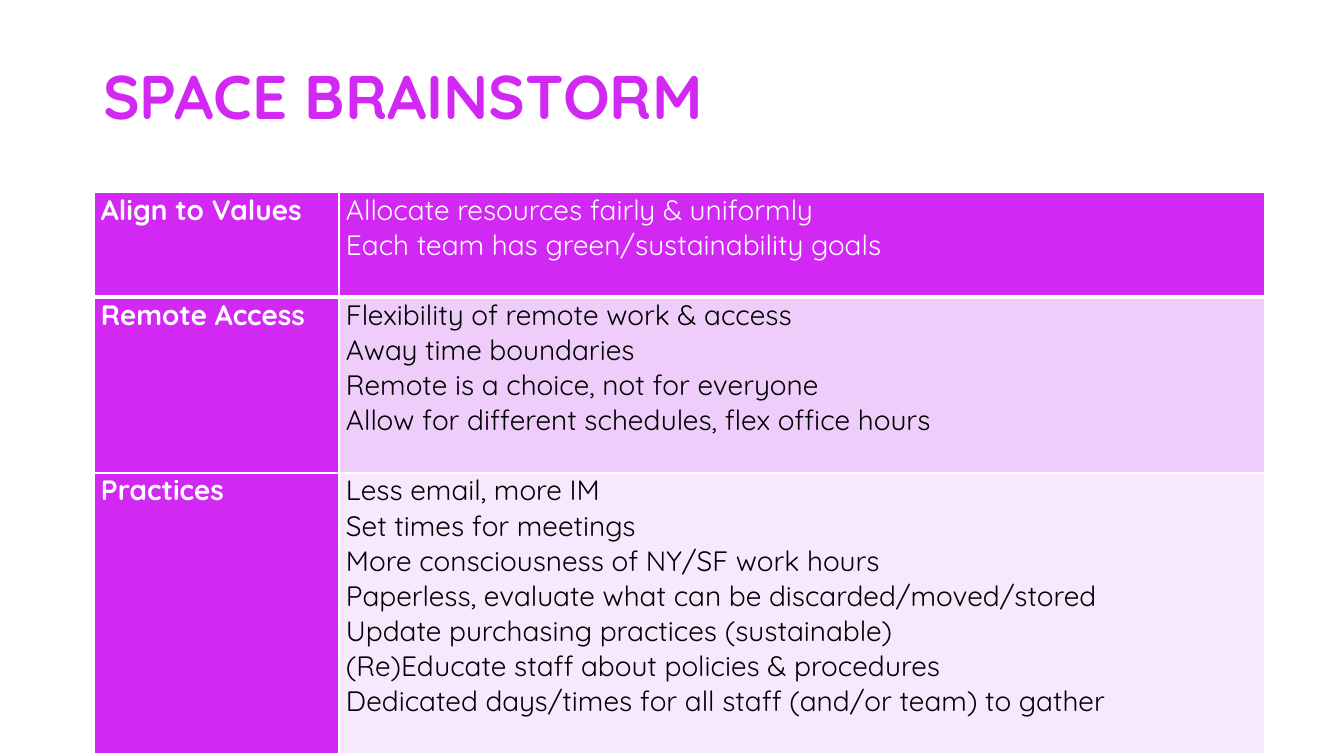
from lxml import etree
from pptx import Presentation
from pptx import util as u
from pptx.dml.color import RGBColor
from pptx.enum import text
from pptx.oxml.ns import qn

TITLE = "SPACE BRAINSTORM"
# topic, ideas, row height in px, idea fill, idea text colour
TOPICS = [
    ("Align to Values", [
        "Allocate resources fairly & uniformly",
        "Each team has green/sustainability goals",
    ], 105, "purple", "white"),
    ("Remote Access", [
        "Flexibility of remote work & access",
        "Away time boundaries",
        "Remote is a choice, not for everyone",
        "Allow for different schedules, flex office hours",
    ], 176, "lilac", "black"),
    ("Practices", [
        "Less email, more IM",
        "Set times for meetings",
        "More consciousness of NY/SF work hours",
        "Paperless, evaluate what can be discarded/moved/stored",
        "Update purchasing practices (sustainable)",
        "(Re)Educate staff about policies & procedures",
        "Dedicated days/times for all staff (and/or team) to gather",
    ], 281, "pale", "black"),
]
COLORS = {"purple": "D228F3", "lilac": "EECDFA", "pale": "F7E8FD",
          "white": "FFFFFF", "black": "000000"}
FONT = "Quicksand"
SLIDE_SIZE = (1344, 756)
TITLE_BOX = (93, 40, 1159, 98)
TABLE_LEFT, TABLE_TOP = 94, 192
COLUMN_WIDTHS = (245, 926)
CELL_INSET = 7
HEADER_RULE, THIN_RULE = 3, 1  # points


def px(length):
    return u.Emu(round(length * 914400 / 100.8))


def rgb(color):
    return RGBColor.from_string(COLORS[color])


def add_run(paragraph, words, size, color, bold):
    run = paragraph.add_run()
    run.text = words
    run.font.name = FONT
    run.font.size = u.Pt(size)
    run.font.bold = bold
    run.font.color.rgb = rgb(color)


def set_borders(cell, top, bottom):
    """Draw white cell borders; top and bottom are widths in points."""
    properties = cell._tc.get_or_add_tcPr()
    widths = {"lnL": THIN_RULE, "lnR": THIN_RULE, "lnT": top, "lnB": bottom}
    for position, (tag, width) in enumerate(widths.items()):
        line = etree.Element(qn(f"a:{tag}"), w=str(u.Pt(width)))
        fill = etree.SubElement(line, qn("a:solidFill"))
        etree.SubElement(fill, qn("a:srgbClr"), val=COLORS["white"])
        properties.insert(position, line)


def fill_cell(cell, lines, fill, color, bold):
    cell.fill.solid()
    cell.fill.fore_color.rgb = rgb(fill)
    cell.margin_left = cell.margin_right = px(CELL_INSET)
    cell.margin_top = cell.margin_bottom = 0
    cell.vertical_anchor = text.MSO_ANCHOR.TOP
    frame = cell.text_frame
    for index, words in enumerate(lines):
        paragraph = frame.add_paragraph() if index else frame.paragraphs[0]
        add_run(paragraph, words, 20, color, bold)


def add_title(slide):
    title = slide.shapes.title
    title.left, title.top, title.width, title.height = map(px, TITLE_BOX)
    frame = title.text_frame
    frame.auto_size = text.MSO_AUTO_SIZE.NONE
    frame.vertical_anchor = text.MSO_ANCHOR.BOTTOM
    paragraph = frame.paragraphs[0]
    paragraph.alignment = text.PP_ALIGN.LEFT
    paragraph.line_spacing = 0.9
    add_run(paragraph, TITLE, 44, "purple", True)


def add_topic_table(slide):
    height = sum(topic[2] for topic in TOPICS)
    table = slide.shapes.add_table(
        len(TOPICS), len(COLUMN_WIDTHS), px(TABLE_LEFT), px(TABLE_TOP),
        px(sum(COLUMN_WIDTHS)), px(height)).table
    table.horz_banding = False
    for column, width in zip(table.columns, COLUMN_WIDTHS):
        column.width = px(width)
    for index, (topic, ideas, row_height, fill, color) in enumerate(TOPICS):
        row = table.rows[index]
        row.height = px(row_height)
        topic_cell, ideas_cell = row.cells
        fill_cell(topic_cell, [topic], "purple", "white", True)
        fill_cell(ideas_cell, ideas, fill, color, False)
        for cell in (topic_cell, ideas_cell):
            set_borders(cell,
                        top=HEADER_RULE if index == 1 else THIN_RULE,
                        bottom=HEADER_RULE if index == 0 else THIN_RULE)


def main():
    presentation = Presentation()
    presentation.slide_width, presentation.slide_height = map(px, SLIDE_SIZE)
    slide = presentation.slides.add_slide(presentation.slide_layouts[5])
    add_title(slide)
    add_topic_table(slide)
    presentation.save("out.pptx")


if __name__ == "__main__":
    main()
